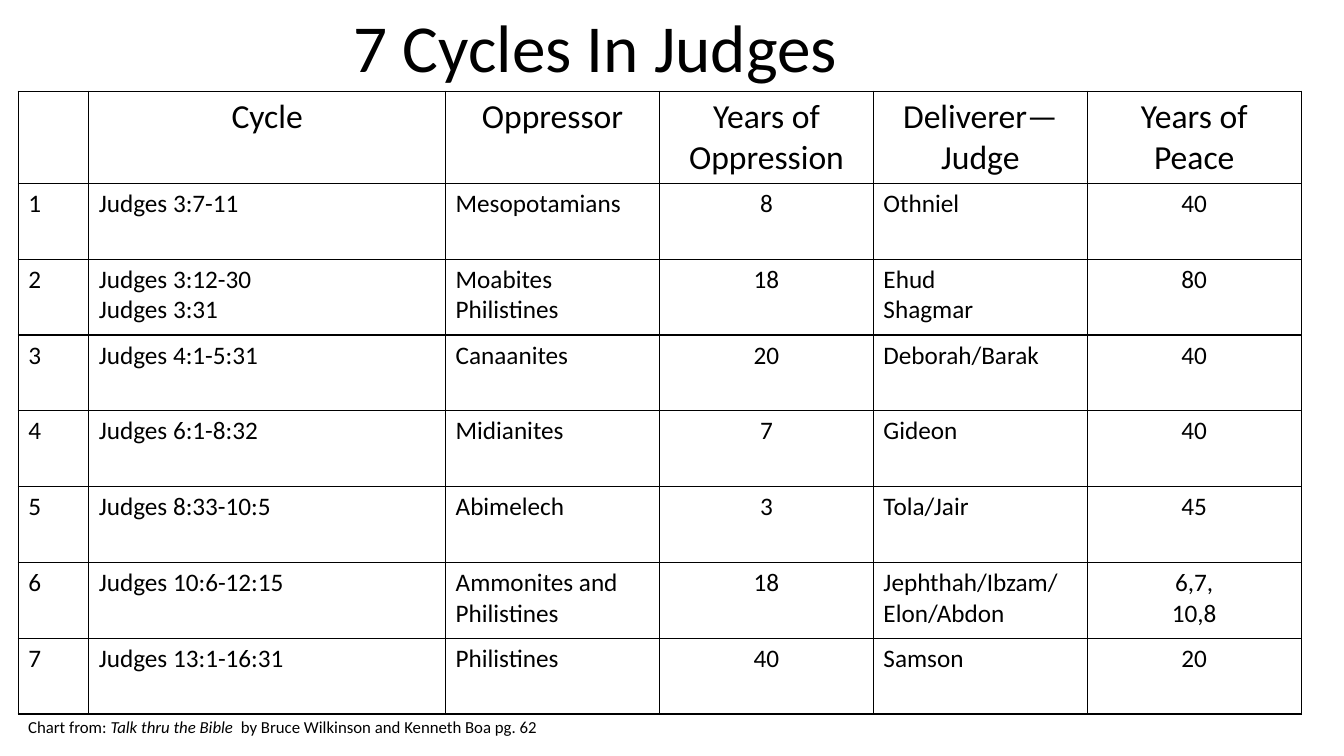
from dataclasses import dataclass

from lxml import etree
from pptx import Presentation
from pptx.dml.color import RGBColor
from pptx.enum.text import MSO_ANCHOR, MSO_AUTO_SIZE, PP_ALIGN
from pptx.oxml.ns import qn
from pptx.util import Pt

LEFT, CENTER = PP_ALIGN.LEFT, PP_ALIGN.CENTER
TOP = MSO_ANCHOR.TOP
NO_FIT = MSO_AUTO_SIZE.NONE
TITLE_ONLY = 5


@dataclass(frozen=True)
class Theme:
    font: str = "Calibri"
    ink: str = "000000"
    title_size: int = 48
    header_size: int = 24
    body_size: int = 18
    caption_size: int = 12
    border: int = 1


HEADERS = ["", "Cycle", "Oppressor", "Years of Oppression",
           "Deliverer—Judge", "Years of Peace"]
CYCLES = [
    ["Judges 3:7-11", "Mesopotamians", "8", "Othniel", "40"],
    ["Judges 3:12-30\nJudges 3:31", "Moabites\nPhilistines", "18",
     "Ehud\nShagmar", "80"],
    ["Judges 4:1-5:31", "Canaanites", "20", "Deborah/Barak", "40"],
    ["Judges 6:1-8:32", "Midianites", "7", "Gideon", "40"],
    ["Judges 8:33-10:5", "Abimelech", "3", "Tola/Jair", "45"],
    ["Judges 10:6-12:15", "Ammonites and Philistines", "18",
     "Jephthah/Ibzam/\nElon/Abdon", "6,7,\n10,8"],
    ["Judges 13:1-16:31", "Philistines", "40", "Samson", "20"],
]
BODY_ALIGNMENTS = [LEFT, LEFT, LEFT, CENTER, LEFT, CENTER]
COLUMN_WIDTHS = [50.4, 254.9] + [152.8] * 4
ROW_HEIGHTS = [65.2] + [54.15] * len(CYCLES)


class SlideBuilder:
    def __init__(self, slide, theme):
        self.slide = slide
        self.theme = theme

    def style(self, para, size, alignment=LEFT):
        para.alignment = alignment
        para.font.name = self.theme.font
        para.font.size = Pt(size)
        para.font.color.rgb = RGBColor.from_string(self.theme.ink)

    def title(self, text, left, top, width, height):
        box = self.slide.shapes.title
        box.left, box.top = Pt(left), Pt(top)
        box.width, box.height = Pt(width), Pt(height)
        frame = box.text_frame
        frame.text = text
        frame.auto_size = NO_FIT
        frame.vertical_anchor = TOP
        self.style(frame.paragraphs[0], self.theme.title_size)

    def caption(self, pieces, left, top, width, height):
        box = self.slide.shapes.add_textbox(
            Pt(left), Pt(top), Pt(width), Pt(height))
        box.text_frame.word_wrap = True
        para = box.text_frame.paragraphs[0]
        self.style(para, self.theme.caption_size)
        for text, italic in pieces:
            span = para.add_run()
            span.text = text
            span.font.italic = italic

    def table(self, rows, left, top, widths, heights):
        frame = self.slide.shapes.add_table(
            len(rows), len(widths), Pt(left), Pt(top),
            Pt(sum(widths)), Pt(sum(heights)))
        table = frame.table
        table.first_row = table.horz_banding = False
        for column, width in zip(table.columns, widths):
            column.width = Pt(width)
        for row, height in zip(table.rows, heights):
            row.height = Pt(height)
        for row_index, values in enumerate(rows):
            for column_index, text in enumerate(values):
                cell = table.cell(row_index, column_index)
                if row_index == 0:
                    self.cell(cell, text, self.theme.header_size, CENTER)
                else:
                    self.cell(cell, text, self.theme.body_size,
                              BODY_ALIGNMENTS[column_index])

    def cell(self, cell, text, size, alignment):
        cell.text = text
        cell.vertical_anchor = TOP
        for para in cell.text_frame.paragraphs:
            self.style(para, size, alignment)
        self.borders(cell)
        cell.fill.background()

    def borders(self, cell):
        properties = cell._tc.get_or_add_tcPr()
        for side in ("a:lnL", "a:lnR", "a:lnT", "a:lnB"):
            line = etree.SubElement(properties, qn(side),
                                    w=str(Pt(self.theme.border)))
            fill = etree.SubElement(line, qn("a:solidFill"))
            etree.SubElement(fill, qn("a:srgbClr"), val=self.theme.ink)


def main():
    deck = Presentation()
    deck.slide_width, deck.slide_height = Pt(960), Pt(540)
    page = deck.slides.add_slide(deck.slide_layouts[TITLE_ONLY])
    builder = SlideBuilder(page, Theme())

    # Title
    builder.title("7 Cycles In Judges", 245.5, 0, 450.7, 65.5)

    # Table of numbered cycles
    numbered = [[str(number), *cycle]
                for number, cycle in enumerate(CYCLES, start=1)]
    builder.table([HEADERS] + numbered, 13, 65.2, COLUMN_WIDTHS, ROW_HEIGHTS)

    # Credit line
    builder.caption([("Chart from: ", False),
                     ("Talk thru the Bible ", True),
                     (" by Bruce Wilkinson and Kenneth Boa pg. 62", False)],
                    13, 508.5, 606.2, 21.6)

    deck.save("out.pptx")


if __name__ == "__main__":
    main()
